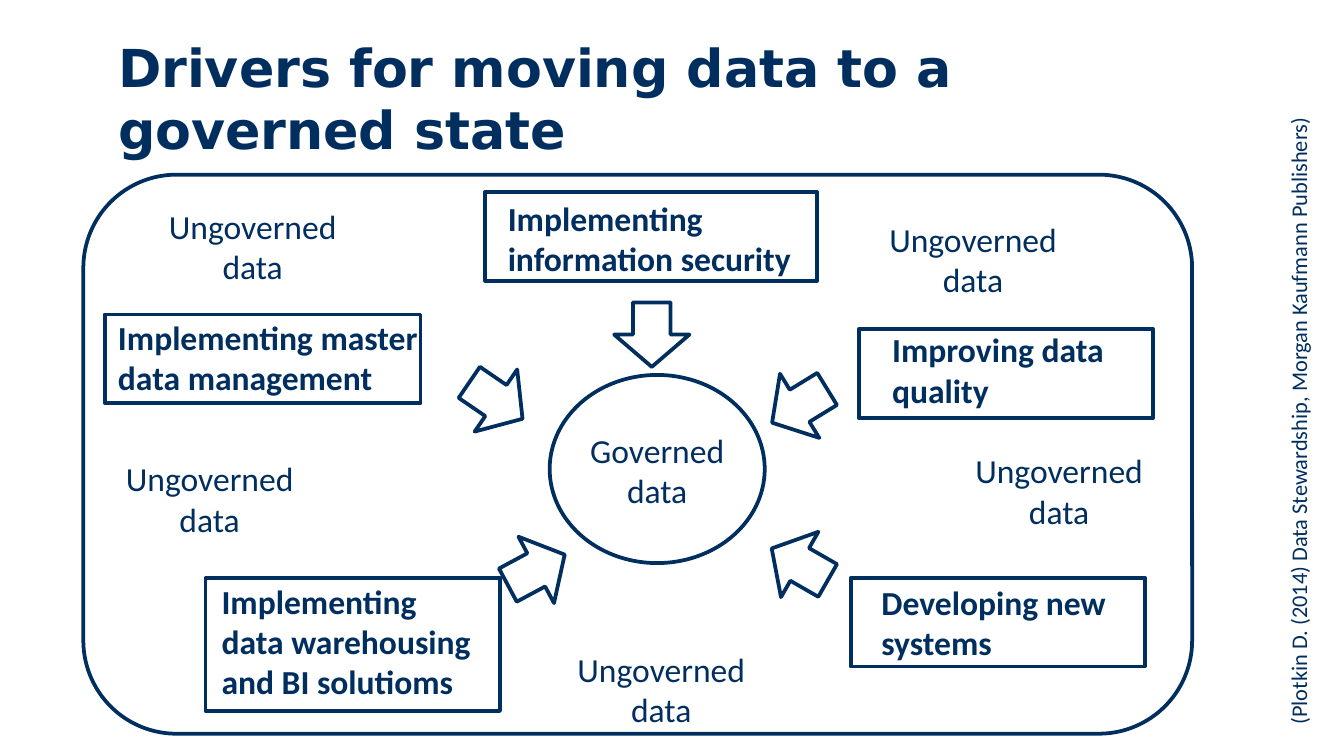
"""Build a slide on the drivers that move data to a governed state."""
import pptx
import pptx.dml.color
import pptx.enum.shapes
import pptx.enum.text
import pptx.util

Inches = pptx.util.Inches
Shape = pptx.enum.shapes.MSO_SHAPE
Align = pptx.enum.text.PP_ALIGN
NAVY = pptx.dml.color.RGBColor(0x00, 0x2F, 0x5F)
WHITE = pptx.dml.color.RGBColor(0xFF, 0xFF, 0xFF)

BODY = {"name": "Calibri", "size": pptx.util.Pt(18), "bold": False}
STRONG = {**BODY, "bold": True}
SMALL = {**BODY, "size": pptx.util.Pt(12)}
HEADING = {"name": "DejaVu Sans", "size": pptx.util.Pt(28), "bold": True}

deck = pptx.Presentation()
deck.slide_width = Inches(10)
deck.slide_height = deck.slide_width * 9 // 16
page = deck.slides.add_slide(deck.slide_layouts[6])


def add_outline(kind, place, rotation=0):
    shape = page.shapes.add_shape(kind, *map(Inches, place))
    shape.shadow.inherit = False
    shape.rotation = rotation
    shape.fill.solid()
    shape.fill.fore_color.rgb = WHITE
    shape.line.color.rgb = NAVY
    shape.line.width = pptx.util.Pt(2)


def add_text(words, place, style, align=Align.LEFT):
    box = page.shapes.add_textbox(*map(Inches, place))
    frame = box.text_frame
    frame.word_wrap = True
    para = frame.paragraphs[0]
    para.alignment = align
    span = para.add_run()
    span.text = words
    span.font.color.rgb = NAVY
    for name, value in style.items():
        setattr(span.font, name, value)
    return box


add_outline(Shape.ROUNDED_RECTANGLE, (0.62, 1.3, 8.25, 4.16))
add_text("Drivers for moving data to a governed state", (0.78, 0.21, 7.49, 0.65), HEADING)

add_outline(Shape.OVAL, (4.09, 2.79, 1.6, 1.4))
add_text("Governed data", (4.08, 3.15, 1.62, 0.71), BODY, Align.CENTER)

arrows = [
    (4.57, 2.25, 0),
    (3.41, 2.74, 304.4),
    (3.71, 4, 241.8),
    (5.67, 2.78, 58.5),
    (5.67, 3.96, 119.8),
]
for left, top, rotation in arrows:
    add_outline(Shape.DOWN_ARROW, (left, top, 0.56, 0.48), rotation)

drivers = [
    ("Implementing information security", (3.61, 1.43, 2.47, 0.66), (3.68, 1.42, 2.77, 1.01)),
    ("Implementing master data management", (0.78, 2.34, 2.35, 0.66), (0.78, 2.31, 2.44, 1.01)),
    ("Improving data quality", (6.39, 2.45, 2.19, 0.66), (6.54, 2.4, 1.9, 1.01)),
    ("Developing new systems", (6.33, 4.3, 2.19, 0.66), (6.46, 4.28, 1.9, 1.01)),
    ("Implementing data warehousing and BI solutioms", (1.53, 4.3, 2.19, 0.99), (1.55, 4.27, 2.08, 1.31)),
]
for words, frame_place, text_place in drivers:
    add_outline(Shape.RECTANGLE, frame_place)
    add_text(words, text_place, STRONG)

for left, top in [(0.75, 3.36), (1.07, 1.48), (6.43, 1.58), (7.07, 3.3), (4.11, 4.78)]:
    add_text("Ungoverned data", (left, top, 1.62, 0.71), BODY, Align.CENTER)

citation = add_text(
    "(Plotkin D. (2014) Data Stewardship, Morgan Kaufmann Publishers)", (7.26, 2.94, 4.8, 0.3), SMALL
)
citation.rotation = 270

deck.save("out.pptx")
